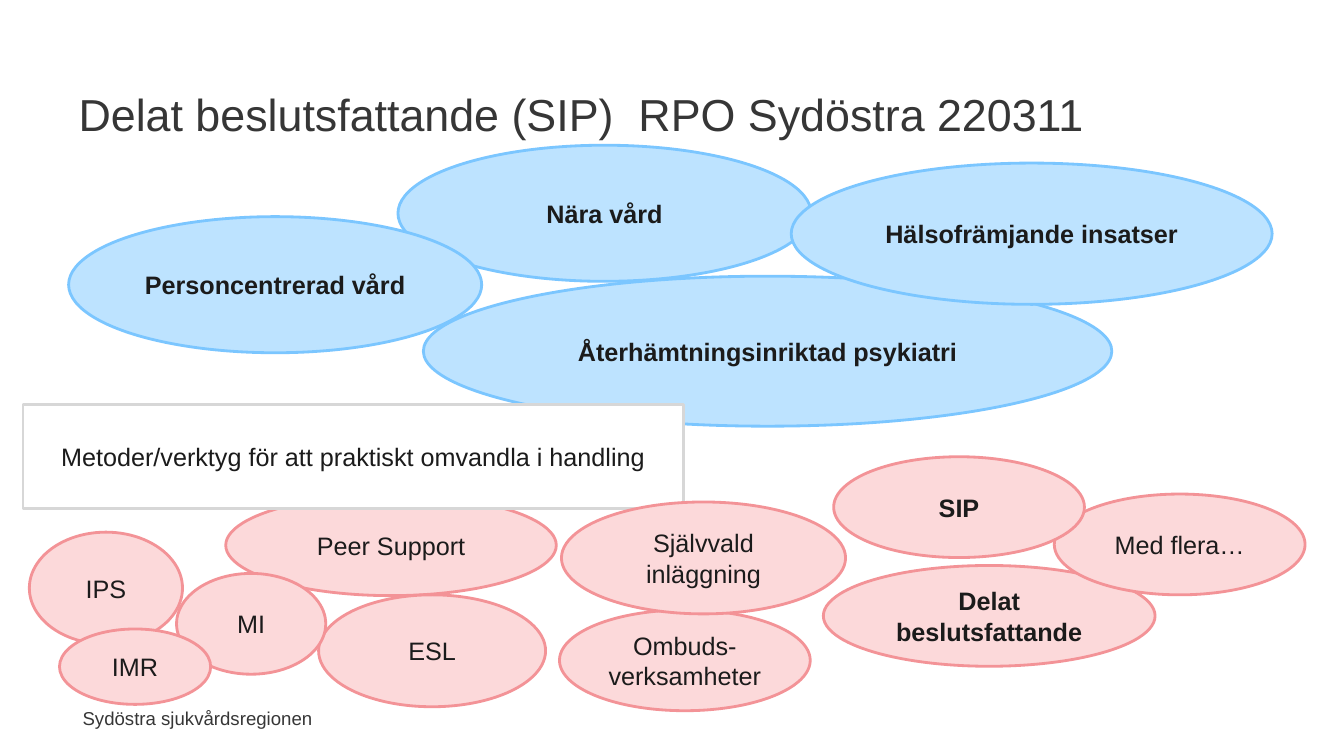
"""Build the slide on shared decision-making: goals in blue, methods in pink."""
from dataclasses import dataclass

from pptx import Presentation
from pptx.dml.color import RGBColor
from pptx.enum import shapes, text
from pptx.util import Cm, Pt

BLUE = RGBColor(0xBD, 0xE3, 0xFF)
BLUE_LINE = RGBColor(0x7B, 0xC6, 0xFF)
PINK = RGBColor(0xFC, 0xD9, 0xDA)
PINK_LINE = RGBColor(0xF3, 0x93, 0x97)
WHITE = RGBColor(0xFF, 0xFF, 0xFF)
GREY_LINE = RGBColor(0xD7, 0xD7, 0xD7)
INK = RGBColor(0x1B, 0x1B, 0x1B)
HEADING = RGBColor(0x36, 0x36, 0x36)
OVAL = shapes.MSO_SHAPE.OVAL
RECTANGLE = shapes.MSO_SHAPE.RECTANGLE


@dataclass(frozen=True)
class Style:
    """Outline and colours of a kind of shape."""

    form: shapes.MSO_SHAPE
    fill: RGBColor
    line: RGBColor


@dataclass(frozen=True)
class Item:
    """A labelled shape, measured in centimetres."""

    label: str
    style: Style
    left: float
    top: float
    width: float
    height: float
    bold: bool = False


GOAL = Style(OVAL, BLUE, BLUE_LINE)
METHOD = Style(OVAL, PINK, PINK_LINE)
BANNER = Style(RECTANGLE, WHITE, GREY_LINE)

ITEMS = [
    Item("Återhämtningsinriktad psykiatri", GOAL, 10.67, 6.96, 17.35, 3.78, True),
    Item("Delat beslutsfattande", METHOD, 20.75, 14.25, 8.36, 2.54, True),
    Item("Peer Support", METHOD, 5.69, 12.47, 8.33, 2.54),
    Item("Nära vård", GOAL, 10.03, 3.66, 10.41, 3.43, True),
    Item("ESL", METHOD, 8.03, 14.99, 5.72, 2.82),
    Item("Hälsofrämjande insatser", GOAL, 19.94, 4.11, 12.12, 3.56, True),
    Item("Personcentrerad vård", GOAL, 1.73, 5.46, 10.41, 3.43, True),
    Item("Metoder/verktyg för att praktiskt omvandla i handling", BANNER,
         0.58, 10.19, 16.64, 2.62),
    Item("Med flera…", METHOD, 26.57, 12.45, 6.32, 2.54),
    Item("SIP", METHOD, 21.01, 11.51, 6.32, 2.54, True),
    Item("Ombuds- verksamheter", METHOD, 14.1, 15.37, 6.32, 2.54),
    Item("MI", METHOD, 4.45, 14.45, 3.76, 2.54),
    Item("IPS", METHOD, 0.74, 13.41, 3.86, 2.82),
    Item("IMR", METHOD, 1.5, 15.85, 3.81, 1.9),
    Item("Självvald inläggning", METHOD, 14.15, 12.65, 7.16, 2.82),
]


def write(tf, label: str, size: float, color: RGBColor, align: text.PP_ALIGN,
          bold: bool = False, wrap: bool = True) -> None:
    """Put one vertically centred line of text in a frame."""
    tf.word_wrap = wrap
    tf.vertical_anchor = text.MSO_ANCHOR.MIDDLE
    p = tf.paragraphs[0]
    p.alignment = align
    r = p.add_run()
    r.text = label
    r.font.name = "Arial"
    r.font.size = Pt(size)
    r.font.bold = bold
    r.font.color.rgb = color


def add_item(s, item: Item) -> None:
    """Draw one labelled shape."""
    sp = s.shapes.add_shape(item.style.form, Cm(item.left), Cm(item.top),
                            Cm(item.width), Cm(item.height))
    sp.shadow.inherit = False
    sp.fill.solid()
    sp.fill.fore_color.rgb = item.style.fill
    sp.line.color.rgb = item.style.line
    sp.line.width = Pt(2)
    write(sp.text_frame, item.label, 18, INK, text.PP_ALIGN.CENTER, item.bold)


def main() -> None:
    """Build and save the slide."""
    prs = Presentation()
    prs.slide_width, prs.slide_height = Cm(33.87), Cm(19.05)
    s = prs.slides.add_slide(prs.slide_layouts[6])

    footer = s.shapes.add_textbox(Cm(1.78), Cm(17.68), Cm(6.35), Cm(0.84))
    write(footer.text_frame, "Sydöstra sjukvårdsregionen", 13.3, HEADING,
          text.PP_ALIGN.RIGHT, wrap=False)
    title = s.shapes.add_textbox(Cm(1.73), Cm(1.63), Cm(30.48), Cm(2.49))
    write(title.text_frame, "Delat beslutsfattande (SIP)  RPO Sydöstra 220311",
          32, HEADING, text.PP_ALIGN.LEFT)

    for item in ITEMS:
        add_item(s, item)
    prs.save("out.pptx")


if __name__ == "__main__":
    main()
